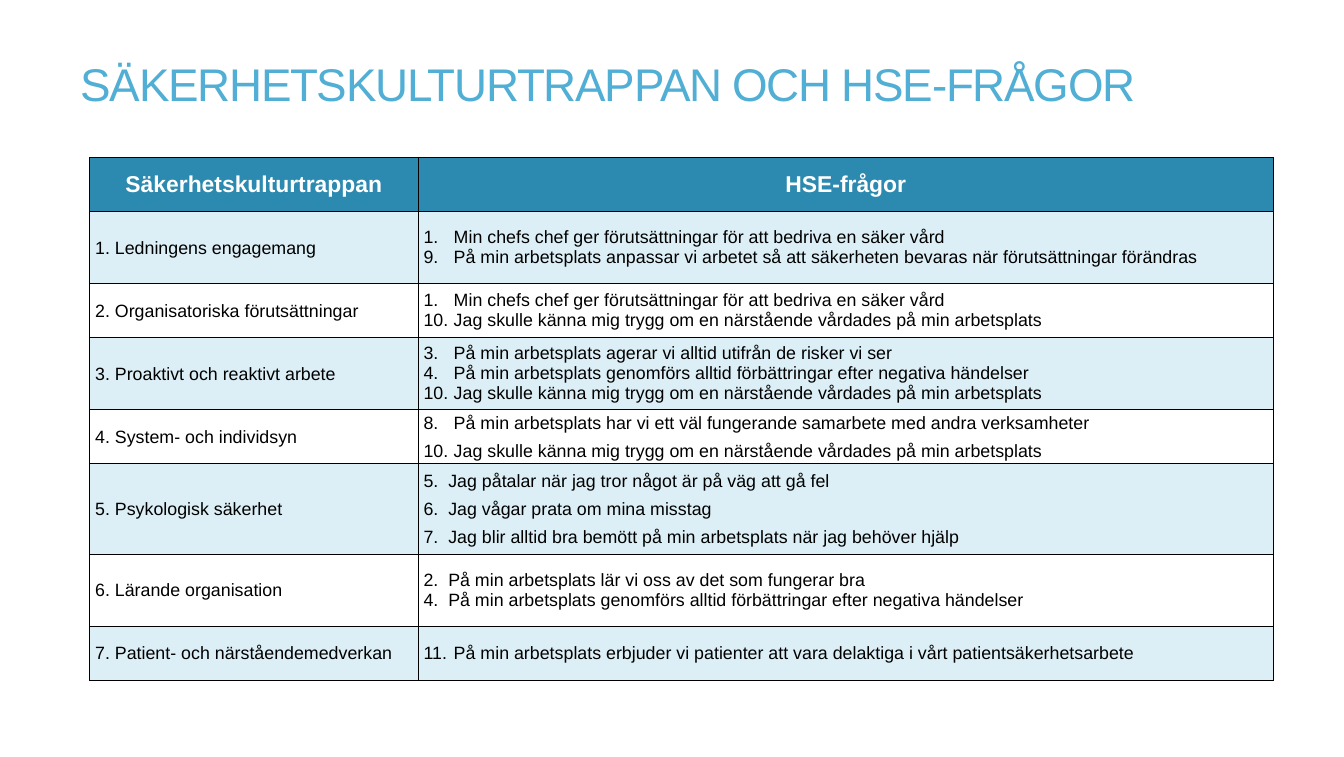
import pptx
import pptx.dml.color
import pptx.enum.text
import pptx.oxml
import pptx.oxml.ns
import pptx.util

Inches, Pt = pptx.util.Inches, pptx.util.Pt
PP_ALIGN, ANCHOR = pptx.enum.text.PP_ALIGN, pptx.enum.text.MSO_ANCHOR

WIDTH, HEIGHT = 14.69, 8.27
ROW_UNIT = 0.197
ROW_UNITS = [3, 4, 3, 4, 3, 5, 4, 3]
COLUMNS = [3.59, 9.35]

TITLE_FONT = {"name": "Arial", "size": Pt(36), "bold": False}
HEADER_FONT = {"name": "Arial", "size": Pt(18), "bold": True}
BODY_FONT = {"name": "Arial", "size": Pt(14), "bold": False}
LOOSE = {"line_spacing": 1.03, "space_after": Pt(5.5)}
TIGHT = {"line_spacing": 1.0, "space_after": Pt(0)}

CHIEF = (1, "Min chefs chef ger förutsättningar för att bedriva en säker vård")
IMPROVE = (4, "På min arbetsplats genomförs alltid förbättringar efter negativa händelser")
TRUST = (10, "Jag skulle känna mig trygg om en närstående vårdades på min arbetsplats")

HEADERS = ["Säkerhetskulturtrappan", "HSE-frågor"]
# Step, paragraph spacing, number indent in inches, questions
STEPS = [
    ("Ledningens engagemang", TIGHT, 0.33, [
        CHIEF,
        (9, "På min arbetsplats anpassar vi arbetet så att säkerheten bevaras "
            "när förutsättningar förändras")]),
    ("Organisatoriska förutsättningar", TIGHT, 0.33, [CHIEF, TRUST]),
    ("Proaktivt och reaktivt arbete", TIGHT, 0.33, [
        (3, "På min arbetsplats agerar vi alltid utifrån de risker vi ser"),
        IMPROVE, TRUST]),
    ("System- och individsyn", LOOSE, 0.33, [
        (8, "På min arbetsplats har vi ett väl fungerande samarbete med andra verksamheter"),
        TRUST]),
    ("Psykologisk säkerhet", LOOSE, 0.27, [
        (5, "Jag påtalar när jag tror något är på väg att gå fel"),
        (6, "Jag vågar prata om mina misstag"),
        (7, "Jag blir alltid bra bemött på min arbetsplats när jag behöver hjälp")]),
    ("Lärande organisation", TIGHT, 0.27, [
        (2, "På min arbetsplats lär vi oss av det som fungerar bra"), IMPROVE]),
    ("Patient- och närståendemedverkan", TIGHT, 0.33, [
        (11, "På min arbetsplats erbjuder vi patienter att vara delaktiga "
             "i vårt patientsäkerhetsarbete")]),
]


def rgb(color):
    return pptx.dml.color.RGBColor.from_string(color)


def apply_format(target, values):
    for name, value in values.items():
        setattr(target, name, value)


def add_run(p, text, font, color):
    r = p.add_run()
    r.text = text
    apply_format(r.font, font)
    r.font.color.rgb = rgb(color)
    return r


def set_borders(cell, color="000000", width=1):
    tc_pr = cell._tc.get_or_add_tcPr()
    for i, side in enumerate(("lnL", "lnR", "lnT", "lnB")):
        tc_pr.insert(i, pptx.oxml.parse_xml(
            f'<a:{side} {pptx.oxml.ns.nsdecls("a")} w="{Pt(width)}">'
            f'<a:solidFill><a:srgbClr val="{color}"/></a:solidFill></a:{side}>'))


def fill_cell(cell, lines, fill, font, color, spacing, align=PP_ALIGN.LEFT, indent=0):
    """Write the lines as paragraphs, hanging them by indent inches."""
    apply_format(cell, {"vertical_anchor": ANCHOR.MIDDLE,
                        "margin_left": Inches(0.06), "margin_right": Inches(0.06),
                        "margin_top": 0, "margin_bottom": 0})
    cell.fill.solid()
    cell.fill.fore_color.rgb = rgb(fill)
    set_borders(cell)
    tf = cell.text_frame
    for i, line in enumerate(lines):
        p = tf.add_paragraph() if i else tf.paragraphs[0]
        apply_format(p, {"alignment": align, **spacing})
        if indent:
            p_pr = p._p.get_or_add_pPr()
            p_pr.set("marL", str(Inches(indent)))
            p_pr.set("indent", str(-Inches(indent)))
        add_run(p, line, font, color)


def place_title(s, left, top, width, height):
    sp = s.shapes.title
    apply_format(sp, {"left": Inches(left), "top": Inches(top),
                      "width": Inches(width), "height": Inches(height)})
    tf = sp.text_frame
    apply_format(tf, {"word_wrap": True, "vertical_anchor": ANCHOR.MIDDLE,
                      "auto_size": pptx.enum.text.MSO_AUTO_SIZE.NONE,
                      "margin_left": 0, "margin_right": 0,
                      "margin_top": 0, "margin_bottom": 0})
    p = tf.paragraphs[0]
    apply_format(p, {"alignment": PP_ALIGN.LEFT, "line_spacing": Pt(50)})
    r = add_run(p, "SÄKERHETSKULTURTRAPPAN OCH HSE-FRÅGOR", TITLE_FONT, "51AED4")
    r._r.get_or_add_rPr().set("spc", "-100")


def add_question_table(s, left, top):
    table = s.shapes.add_table(
        len(ROW_UNITS), len(COLUMNS), Inches(left), Inches(top),
        Inches(sum(COLUMNS)), Inches(sum(ROW_UNITS) * ROW_UNIT)).table
    for column, width in zip(table.columns, COLUMNS):
        column.width = Inches(width)
    for row, units in zip(table.rows, ROW_UNITS):
        row.height = Inches(units * ROW_UNIT)
    for i, header in enumerate(HEADERS):
        fill_cell(table.cell(0, i), [header], "2C8AB0", HEADER_FONT, "FFFFFF",
                  LOOSE, PP_ALIGN.CENTER)
    for i, (step, spacing, indent, questions) in enumerate(STEPS, 1):
        fill = "DCEFF6" if i % 2 else "FFFFFF"
        fill_cell(table.cell(i, 0), [f"{i}. {step}"], fill, BODY_FONT, "000000", LOOSE)
        lines = [f"{number}.\t{question}" for number, question in questions]
        fill_cell(table.cell(i, 1), lines, fill, BODY_FONT, "000000", spacing, indent=indent)


def main():
    prs = pptx.Presentation()
    prs.slide_width, prs.slide_height = Inches(WIDTH), Inches(HEIGHT)
    s = prs.slides.add_slide(prs.slide_layouts[5])
    place_title(s, 0.06 * WIDTH, 0.48, 0.87 * WIDTH, 0.77)
    add_question_table(s, 0.98, 1.72)
    prs.save("out.pptx")


if __name__ == "__main__":
    main()
